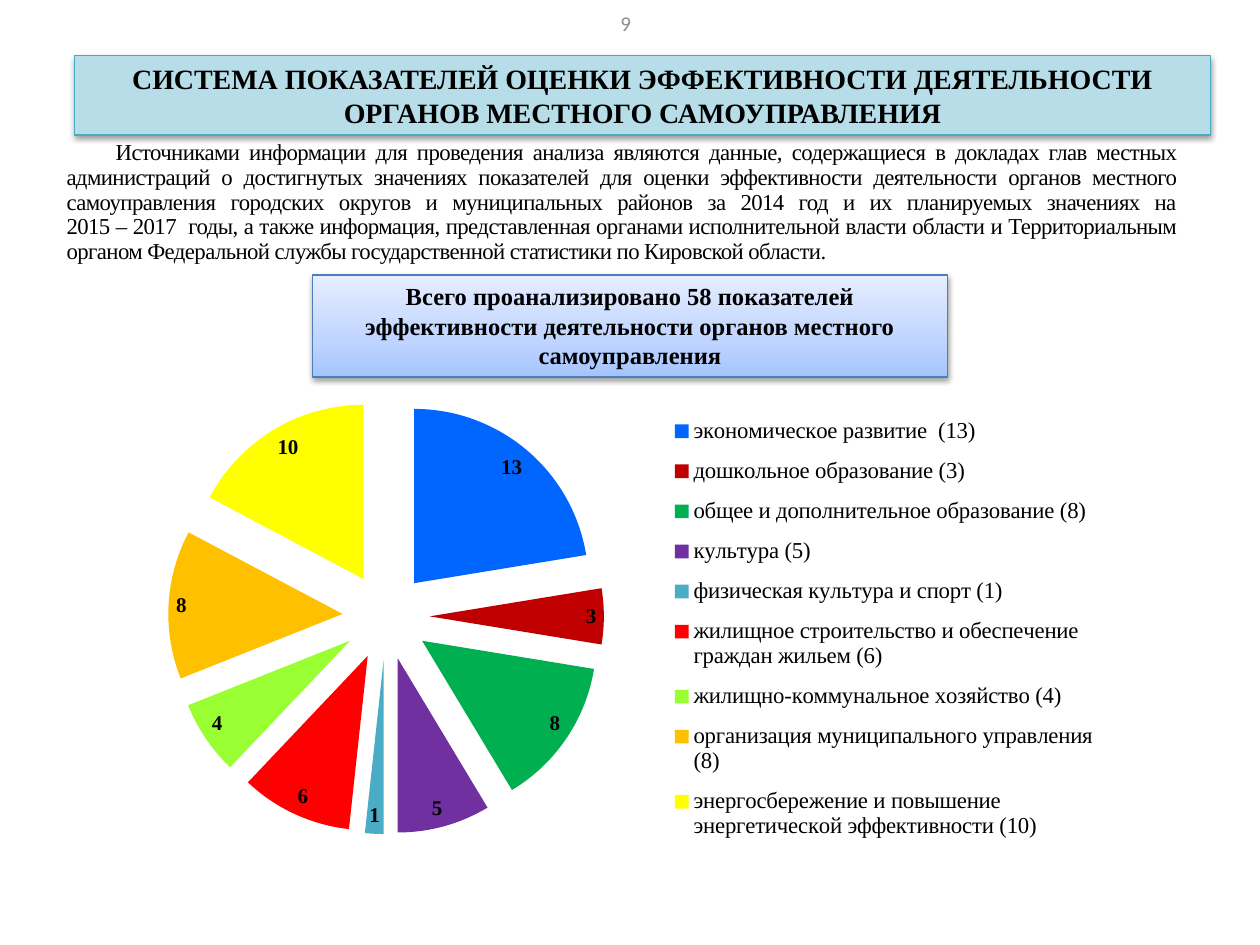
from copy import deepcopy

from lxml import etree
from pptx import Presentation
from pptx import util as u
from pptx.chart.data import CategoryChartData
from pptx.dml.color import RGBColor
from pptx.enum import chart as charts, shapes, text
from pptx.oxml import parse_xml
from pptx.oxml.ns import qn

BLACK = RGBColor(0x00, 0x00, 0x00)
GRAY = RGBColor(0x8C, 0x8C, 0x8C)
PALE_TEAL = RGBColor(0xB7, 0xDE, 0xE8)
TEAL_LINE = RGBColor(0x46, 0xAA, 0xC5)
BLUE_LINE = RGBColor(0x4B, 0x7E, 0xBC)
GRADIENT = [
    (0, RGBColor(0xA4, 0xC4, 0xFF)),
    (0.35, RGBColor(0xBF, 0xD4, 0xFF)),
    (1, RGBColor(0xE6, 0xEE, 0xFF)),
]
SERIF = "Times New Roman"
INDICATORS = [
    ("экономическое развитие  (13)", 13, RGBColor(0x00, 0x66, 0xFF)),
    ("дошкольное образование (3)", 3, RGBColor(0xC0, 0x00, 0x00)),
    ("общее и дополнительное образование (8)", 8, RGBColor(0x00, 0xB0, 0x50)),
    ("культура (5)", 5, RGBColor(0x70, 0x30, 0xA0)),
    ("физическая культура и спорт (1)", 1, RGBColor(0x4B, 0xAC, 0xC6)),
    ("жилищное строительство и обеспечение граждан жильем (6)", 6, RGBColor(0xFF, 0x00, 0x00)),
    ("жилищно-коммунальное хозяйство (4)", 4, RGBColor(0x99, 0xFF, 0x33)),
    ("организация муниципального управления (8)", 8, RGBColor(0xFF, 0xC0, 0x00)),
    ("энергосбережение и повышение энергетической эффективности (10)", 10, RGBColor(0xFF, 0xFF, 0x00)),
]
A = "http://schemas.openxmlformats.org/drawingml/2006/main"
C = "http://schemas.openxmlformats.org/drawingml/2006/chart"
SHADOW = (
    f'<a:effectLst xmlns:a="{A}"><a:outerShdw blurRad="40000" dist="20000" dir="5400000" rotWithShape="0">'
    '<a:srgbClr val="000000"><a:alpha val="38000"/></a:srgbClr></a:outerShdw></a:effectLst>'
)

presentation = Presentation()
presentation.slide_width = u.Inches(10)
presentation.slide_height = u.Inches(7.5)
W, H = presentation.slide_width, presentation.slide_height
slide = presentation.slides.add_slide(presentation.slide_layouts[6])


def box_at(left, top, width, height):
    return [int(left * W), int(top * H), int(width * W), int(height * H)]


def add_run(paragraph, words, size, color=BLACK, bold=False, name=SERIF):
    run = paragraph.add_run()
    run.text = words
    run.font.size = u.Pt(size)
    run.font.name = name
    run.font.bold = bold
    run.font.color.rgb = color
    return run


sources = slide.shapes.add_textbox(*box_at(0.043, 0.143, 0.9, 0.145))
sources.text_frame.word_wrap = True
paragraph = sources.text_frame.paragraphs[0]
paragraph.alignment = text.PP_ALIGN.JUSTIFY
paragraph.line_spacing = 0.9
paragraph._p.get_or_add_pPr().set("indent", str(u.Inches(0.39)))
for number, words in enumerate([
    "Источниками информации для проведения анализа являются данные, содержащиеся в докладах глав "
    "местных администраций о достигнутых значениях показателей для оценки эффективности деятельности "
    "органов местного самоуправления городских округов и муниципальных районов за 2014 год и их "
    "планируемых значениях на",
    "2015 – 2017  годы, а также информация, представленная органами исполнительной власти области и "
    "Территориальным органом Федеральной службы государственной статистики по Кировской области.",
]):
    if number:
        paragraph.add_line_break()
    run = add_run(paragraph, words, 13)
    run._r.get_or_add_rPr().set("spc", "-30")

banners = []
for place, line_color, anchor, size, words in [
    ((0.248, 0.291, 0.504, 0.108), BLUE_LINE, text.MSO_ANCHOR.TOP, 14,
     "Всего проанализировано 58 показателей эффективности деятельности органов местного самоуправления"),
    ((0.059, 0.059, 0.902, 0.084), TEAL_LINE, text.MSO_ANCHOR.MIDDLE, 16,
     "СИСТЕМА ПОКАЗАТЕЛЕЙ ОЦЕНКИ ЭФФЕКТИВНОСТИ ДЕЯТЕЛЬНОСТИ ОРГАНОВ МЕСТНОГО САМОУПРАВЛЕНИЯ"),
]:
    banner = slide.shapes.add_shape(shapes.MSO_SHAPE.RECTANGLE, *box_at(*place))
    banner.line.color.rgb = line_color
    banner.line.width = u.Pt(0.75)
    banner.text_frame.word_wrap = True
    banner.text_frame.vertical_anchor = anchor
    paragraph = banner.text_frame.paragraphs[0]
    paragraph.alignment = text.PP_ALIGN.CENTER
    add_run(paragraph, words, size, bold=True)
    banners.append(banner)

total, title = banners
title.fill.solid()
title.fill.fore_color.rgb = PALE_TEAL
total.fill.gradient()
total.fill.gradient_angle = 90
stop_list = total._element.spPr.find(".//" + qn("a:gsLst"))
stop_list.insert(1, deepcopy(stop_list[0]))
for stop, (position, color) in zip(total.fill.gradient_stops, GRADIENT):
    stop.position = position
    stop.color.rgb = color
for banner in banners:
    banner._element.spPr.append(parse_xml(SHADOW))

page_number = slide.shapes.add_textbox(*box_at(0.012, 0, 0.969, 0.053))
page_number.text_frame.word_wrap = True
page_number.text_frame.vertical_anchor = text.MSO_ANCHOR.MIDDLE
paragraph = page_number.text_frame.paragraphs[0]
paragraph.alignment = text.PP_ALIGN.CENTER
paragraph.line_spacing = 0.8
paragraph.space_before = u.Pt(2.4)
add_run(paragraph, "9", 12, GRAY, name="Calibri")

names, counts, colors = zip(*INDICATORS)
chart_data = CategoryChartData()
chart_data.categories = names
chart_data.add_series("Series 1", counts)
chart = slide.shapes.add_chart(
    charts.XL_CHART_TYPE.PIE, *box_at(0.083, 0.395, 0.798, 0.536), chart_data
).chart
chart.has_title = False
chart.font.name = "Calibri"
chart.font.size = u.Pt(10)
chart.font.color.rgb = BLACK

plot = chart.plots[0]
plot.vary_by_categories = True
series = plot.series[0]
for index, color in enumerate(colors):
    fill = series.points[index].format.fill
    fill.solid()
    fill.fore_color.rgb = color
explosion = etree.Element(qn("c:explosion"), val="25")
series._element.find(qn("c:dPt")).addprevious(explosion)

plot.has_data_labels = True
labels = plot.data_labels
labels.show_value = True
labels.show_percentage = False
labels.position = charts.XL_LABEL_POSITION.INSIDE_END
labels.font.name = SERIF
labels.font.size = u.Pt(12)
labels.font.bold = True
labels.font.color.rgb = BLACK

chart.has_legend = True
legend = chart.legend
legend.position = charts.XL_LEGEND_POSITION.CORNER
legend.include_in_layout = False
legend.font.name = SERIF
legend.font.size = u.Pt(13)
legend.font.color.rgb = BLACK

plot_area = chart._chartSpace.chart.plotArea
for element, follower, target, place in [
    (plot_area, plot._element, '<c:layoutTarget val="inner"/>', (0.06, 0.05, 0.44, 0.86)),
    (legend._element, legend._element.find(qn("c:overlay")), "", (0.56, 0.06, 0.43, 0.89)),
]:
    for old in element.findall(qn("c:layout")):
        element.remove(old)
    x, y, width, height = place
    follower.addprevious(parse_xml(
        f'<c:layout xmlns:c="{C}"><c:manualLayout>{target}<c:xMode val="edge"/><c:yMode val="edge"/>'
        f'<c:x val="{x}"/><c:y val="{y}"/><c:w val="{width}"/><c:h val="{height}"/>'
        '</c:manualLayout></c:layout>'
    ))

presentation.save("out.pptx")
